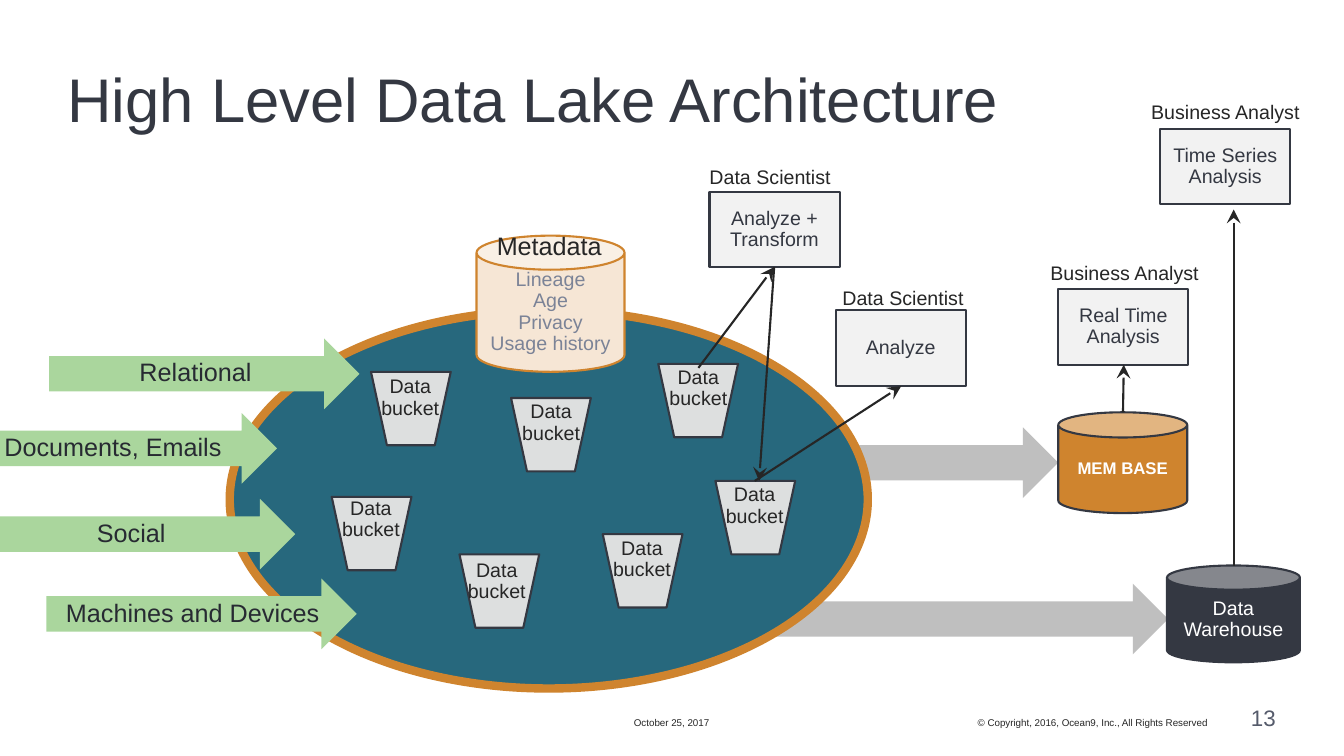
import pptx
import pptx.util
import pptx.dml.color
import pptx.enum.shapes
import pptx.enum.text
import lxml.etree
from pptx.oxml.ns import qn

Cm, Pt = pptx.util.Cm, pptx.util.Pt
KIND = pptx.enum.shapes.MSO_SHAPE
ALIGN = pptx.enum.text.PP_ALIGN
ANCHOR = pptx.enum.text.MSO_ANCHOR

# Content: positions and sizes in centimetres
INK, TEXT, WHITE = "343842", "262626", "FFFFFF"
TITLE = "High Level Data Lake Architecture"
FOOTERS = [  # text, box, size, colour, alignment
    ("October 25, 2017", (15.54, 17.78, 2.77, 0.58), 7, TEXT, ALIGN.CENTER),
    ("© Copyright, 2016, Ocean9, Inc., All Rights Reserved",
     (19.25, 17.78, 11.18, 0.58), 7, TEXT, ALIGN.RIGHT),
    ("13", (30.68, 17.78, 1.47, 0.64), 16, "555B6B", ALIGN.RIGHT),
]
OUTFLOWS = [(18.85, 14.71, 10.59, 1.78), (19.91, 10.77, 6.76, 1.78)]
LAKE = (5.79, 7.82, 16.08, 9.53)
SOURCE_SIZE = (7.82, 1.78)
SOURCES = [
    ("Relational", 1.24, 8.53),
    ("Documents, Emails", -0.84, 10.41),
    ("Social", -0.38, 12.57),
    ("Machines and Devices", 1.17, 14.58),
]
BUCKET_SIZE, BUCKET_TEXT_SIZE = (2.01, 1.85), (2.54, 1.35)
BUCKETS = [  # corner of the bucket, corner of its text
    ((9.35, 9.37), (9.07, 9.5)),
    ((16.59, 9.17), (16.33, 9.27)),
    ((18.03, 12.12), (17.75, 12.22)),
    ((15.19, 13.46), (14.91, 13.56)),
    ((11.58, 13.97), (11.25, 14.12)),
    ((8.36, 12.52), (8.08, 12.57)),
    ((12.88, 10.03), (12.62, 10.13)),
]
CANS = [  # text, box, fill, line, font size, font colour, bold
    ("Lineage\nAge\nPrivacy\nUsage history", (12.01, 5.94, 3.73, 3.43),
     "F6E6D5", "CF842E", 14, "7B8397", False),
    ("Data Warehouse", (29.41, 14.25, 3.35, 2.44), INK, INK, 14, WHITE, False),
    ("MEM BASE", (26.67, 10.39, 3.25, 2.54), "CF842E", INK, 12, WHITE, True),
]
METADATA = (12.27, 5.69, 3.18, 1.02)
TASK_SIZE = (3.28, 1.9)
TASKS = [  # task, its corner, role, corner and width of the role label
    ("Analyze + Transform", (17.88, 4.83), "Data Scientist", (17.88, 4.22, 5.08)),
    ("Analyze", (21.06, 7.82), "Data Scientist", (21.23, 7.26, 3.33)),
    ("Real Time Analysis", (26.67, 7.29), "Business Analyst", (26.47, 6.63, 5.08)),
    ("Time Series Analysis", (29.24, 3.25), "Business Analyst", (29.01, 2.59, 5.08)),
]
ARROWS = [  # pointed end, plain end
    ((19.13, 12.12), (19.51, 6.73)),
    ((19.51, 6.73), (17.6, 9.27)),
    ((22.71, 9.73), (19.02, 12.12)),
    ((28.32, 9.19), (28.3, 10.39)),
    ((31.09, 5.28), (31.09, 14.25)),
]


def rgb(value):
    return pptx.dml.color.RGBColor.from_string(value)


def write(shape, text, size, colour, align, anchor, wrap=True, spacing=0.9, bold=False):
    frame = shape.text_frame
    frame.text = text
    frame.word_wrap = wrap
    frame.vertical_anchor = anchor
    for paragraph in frame.paragraphs:
        paragraph.alignment = align
        paragraph.line_spacing = spacing
        font = paragraph.runs[0].font
        font.name, font.size, font.bold = "Arial", Pt(size), bold
        font.color.rgb = rgb(colour)


def add_shape(kind, box, fill, line=None, width=1.5):
    shape = slide.shapes.add_shape(kind, *map(Cm, box))
    shape.shadow.inherit = False
    shape.fill.solid()
    shape.fill.fore_color.rgb = rgb(fill)
    if line:
        shape.line.color.rgb = rgb(line)
        shape.line.width = Pt(width)
    else:
        shape.line.fill.background()
    return shape


def add_text(text, box, size, colour=TEXT, align=ALIGN.LEFT, anchor=ANCHOR.TOP,
             wrap=False, spacing=0.9, inset=False):
    shape = slide.shapes.add_textbox(*map(Cm, box))
    frame = shape.text_frame
    if not inset:
        frame.margin_left = frame.margin_right = frame.margin_top = frame.margin_bottom = 0
    write(shape, text, size, colour, align, anchor, wrap, spacing)


def add_arrow(tip, tail):
    line = slide.shapes.add_connector(
        pptx.enum.shapes.MSO_CONNECTOR.STRAIGHT, *map(Cm, tip + tail))
    line.line.color.rgb = rgb(TEXT)
    line.line.width = Pt(1.5)
    properties = line.line._get_or_add_ln()
    lxml.etree.SubElement(properties, qn("a:headEnd"), type="stealth", w="lg", len="lg")
    lxml.etree.SubElement(properties.getparent(), qn("a:effectLst"))


presentation = pptx.Presentation()
presentation.slide_width, presentation.slide_height = Cm(33.87), Cm(19.05)
slide = presentation.slides.add_slide(presentation.slide_layouts[6])

# Flows out of the lake, title and footer
for box in OUTFLOWS:
    add_shape(KIND.RIGHT_ARROW, box, "BFBFBF")
add_text(TITLE, (1.7, 1.57, 30.48, 2.01), 44, INK, anchor=ANCHOR.MIDDLE, wrap=True)
for text, box, size, colour, align in FOOTERS:
    add_text(text, box, size, colour, align, ANCHOR.BOTTOM, spacing=1.0)

# Lake and its sources
add_shape(KIND.OVAL, LAKE, "27687D", "CF842E", 6)
for text, left, top in SOURCES:
    source = add_shape(KIND.RIGHT_ARROW, (left, top) + SOURCE_SIZE, "AAD69D")
    write(source, text, 18, "272A32", ALIGN.CENTER, ANCHOR.MIDDLE)

# Buckets, stores and metadata
for corner, text_corner in BUCKETS:
    add_shape(KIND.FLOWCHART_MANUAL_OPERATION, corner + BUCKET_SIZE, "DDDFDF", INK)
    add_text("Data\nbucket", text_corner + BUCKET_TEXT_SIZE, 14, align=ALIGN.CENTER)
for text, box, fill, line, size, colour, bold in CANS:
    can = add_shape(KIND.CAN, box, fill, line)
    write(can, text, size, colour, ALIGN.CENTER, ANCHOR.MIDDLE, bold=bold)
add_text("Metadata", METADATA, 18, spacing=1.0, inset=True)

# Tasks with the roles above them
for task, corner, role, (left, top, width) in TASKS:
    box = add_shape(KIND.RECTANGLE, corner + TASK_SIZE, "F2F2F2", INK)
    write(box, task, 14, INK, ALIGN.CENTER, ANCHOR.MIDDLE)
    add_text(role, (left, top, width, 0.89), 14)

# Arrows between data and tasks
for tip, tail in ARROWS:
    add_arrow(tip, tail)

presentation.save("out.pptx")
